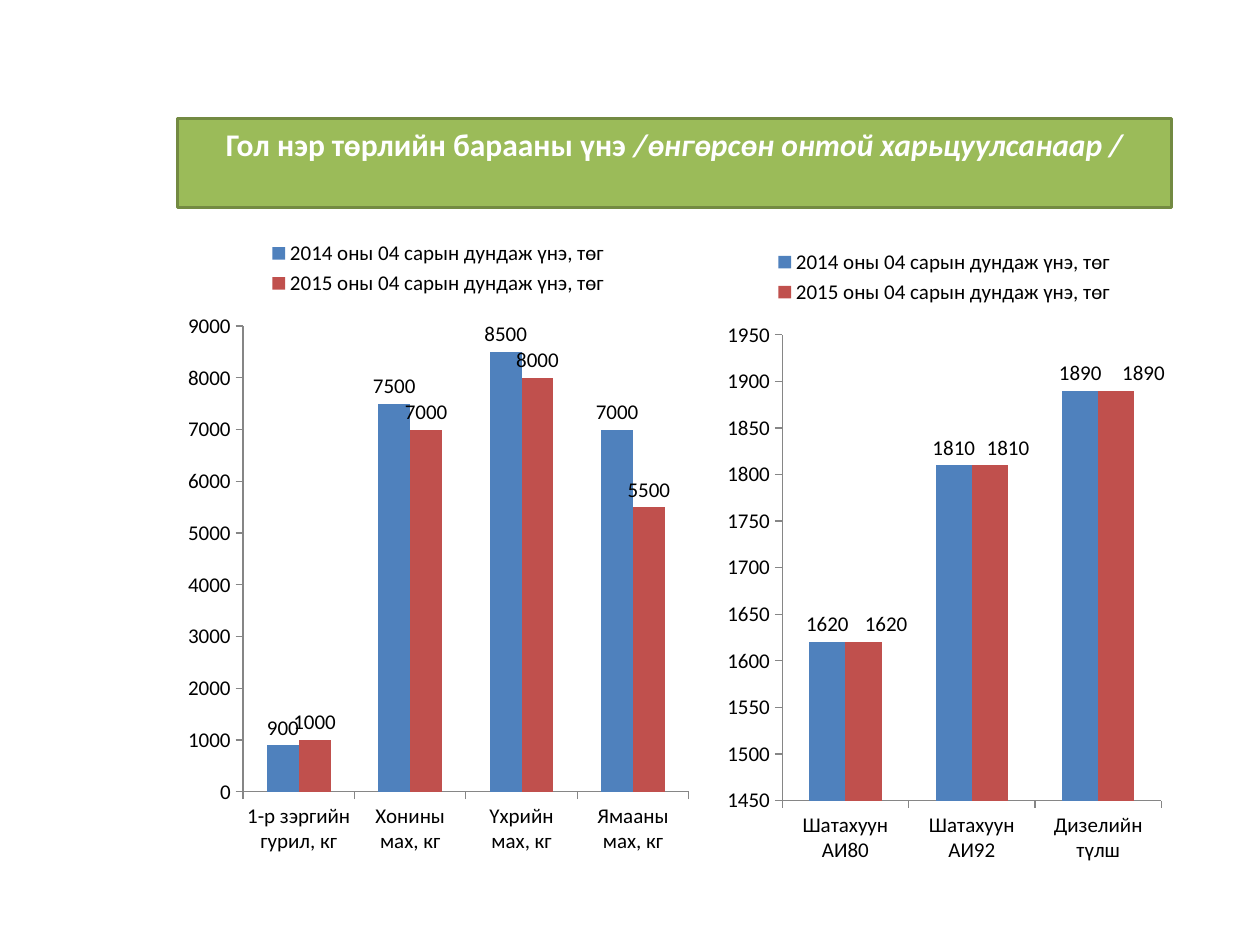
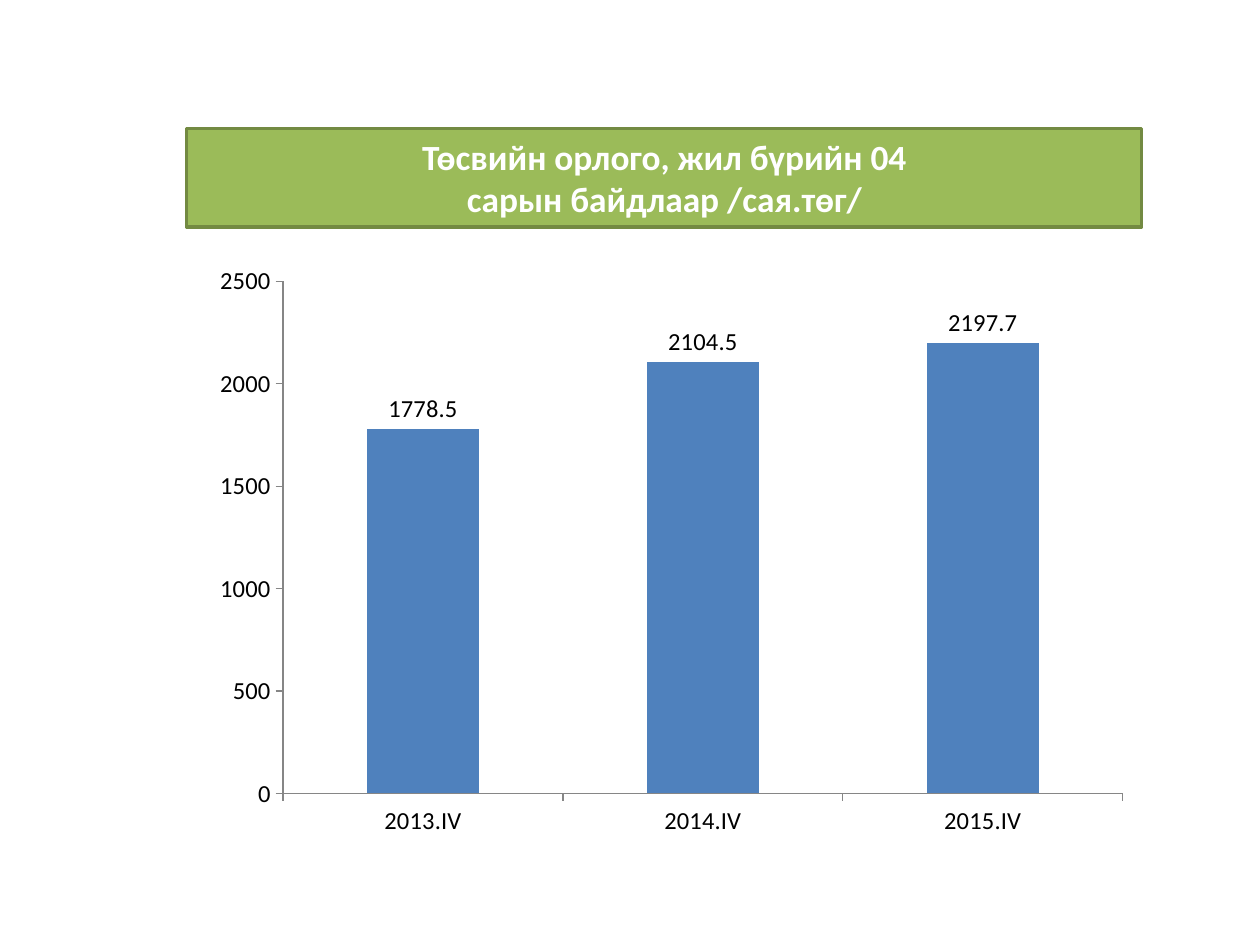
from lxml import etree
from pptx import Presentation
from pptx.chart.data import CategoryChartData
from pptx.dml.color import RGBColor
from pptx.enum.chart import (XL_CHART_TYPE as ChartType, XL_LABEL_POSITION as LabelPos,
                             XL_LEGEND_POSITION as LegendPos, XL_TICK_MARK as Tick)
from pptx.enum.shapes import MSO_SHAPE as Shape
from pptx.enum.text import MSO_ANCHOR as Anchor, PP_ALIGN as Align
from pptx.oxml.ns import qn
from pptx.util import Pt

# Content: boxes are (left, top, width, height) in points
FONT = "Calibri"
COLORS = {"band": "9BBB59", "band_line": "738A42", "white": "FFFFFF",
          "text": "000000", "axis": "868686"}
SERIES_COLORS = ["4F81BD", "C0504D"]
YEARS = ["2014 оны 04 сарын дундаж үнэ, төг", "2015 оны 04 сарын дундаж үнэ, төг"]

SLIDES = [
    {"band": (101.5, 67.7, 568, 51), "size": 18,
     "title": [[("Гол нэр төрлийн барааны үнэ ", False),
                ("/өнгөрсөн онтой харьцуулсанаар /", True)]],
     "charts": [
         {"box": (410.4, 134.6, 258.5, 365.8), "size": 12, "legend": True,
          "cats": ["Шатахуун АИ80", "Шатахуун АИ92", "Дизелийн түлш"],
          "series": [(YEARS[0], (1620, 1810, 1890)), (YEARS[1], (1620, 1810, 1890))],
          "scale": (1450, 1950, 50), "label_shifts": (0.05, 0.04, 0.06)},
         {"box": (101.5, 129.6, 298, 365.8), "size": 12, "legend": True,
          "cats": ["1-р зэргийн гурил, кг", "Хонины мах, кг", "Үхрийн мах, кг",
                   "Ямааны мах, кг"],
          "series": [(YEARS[0], (900, 7500, 8500, 7000)),
                     (YEARS[1], (1000, 7000, 8000, 5500))],
          "scale": (0, 9000, 1000)}]},
    {"band": (106.6, 73.4, 545.8, 56.2), "size": 20.2,
     "title": [[("Төсвийн орлого, жил бүрийн 04", False)],
               [("сарын байдлаар /сая.төг/", False)]],
     "charts": [
         {"box": (106.6, 146.2, 551.5, 365.8), "size": 14, "legend": False,
          "cats": ["2013.IV", "2014.IV", "2015.IV"],
          "series": [("Series 1", (1778.5, 2104.5, 2197.7))],
          "scale": (0, 2500, 500), "plot": (0.1, 0.04, 0.87, 0.8)}]},
]


def rgb(name):
    return RGBColor.from_string(COLORS.get(name, name))


def make_layout(**values):
    """Return a c:layout element holding a manual layout."""
    layout = etree.Element(qn("c:layout"))
    manual = etree.SubElement(layout, qn("c:manualLayout"))
    for tag, value in values.items():
        etree.SubElement(manual, qn("c:" + tag)).set("val", str(value))
    return layout


def add_band(s, box, lines, size):
    sp = s.shapes.add_shape(Shape.RECTANGLE, *map(Pt, box))
    sp.shadow.inherit = False
    sp.fill.solid()
    sp.fill.fore_color.rgb = rgb("band")
    sp.line.color.rgb = rgb("band_line")
    sp.line.width = Pt(2)
    etree.SubElement(sp.line._get_or_add_ln(), qn("a:round"))
    tf = sp.text_frame
    tf.word_wrap = True
    tf.vertical_anchor = Anchor.TOP
    for i, line in enumerate(lines):
        p = tf.add_paragraph() if i else tf.paragraphs[0]
        p.alignment = Align.CENTER
        for text, italic in line:
            r = p.add_run()
            r.text = text
            if italic:
                r.font.italic = True
        p.font.name, p.font.size, p.font.bold = FONT, Pt(size), True
        p.font.color.rgb = rgb("white")


def add_column_chart(s, spec):
    data = CategoryChartData()
    data.categories = spec["cats"]
    for name, values in spec["series"]:
        data.add_series(name, values)
    chart = s.shapes.add_chart(ChartType.COLUMN_CLUSTERED, *map(Pt, spec["box"]), data).chart
    chart.has_title = False
    chart.font.name, chart.font.size = FONT, Pt(spec["size"])
    chart.font.color.rgb = rgb("text")
    chart.has_legend = spec["legend"]
    if spec["legend"]:
        chart.legend.position = LegendPos.TOP
        chart.legend.include_in_layout = False

    # Axes
    for axis in (chart.category_axis, chart.value_axis):
        axis.has_major_gridlines = False
        axis.major_tick_mark = Tick.OUTSIDE
        axis.minor_tick_mark = Tick.NONE
        axis.format.line.color.rgb = rgb("axis")
        axis.format.line.width = Pt(0.75)
    axis = chart.value_axis
    axis.minimum_scale, axis.maximum_scale, axis.major_unit = spec["scale"]

    # Columns and value labels
    plot = chart.plots[0]
    plot.vary_by_categories = False
    plot.gap_width, plot.overlap = 150, 0
    for ser, color in zip(plot.series, SERIES_COLORS):
        ser.format.fill.solid()
        ser.format.fill.fore_color.rgb = rgb(color)
        ser.invert_if_negative = False
        ser.data_labels.show_value = True
        ser.data_labels.position = LabelPos.OUTSIDE_END

    # Labels of the last series moved to the right
    shifts = spec.get("label_shifts", ())
    for i, shift in enumerate(shifts):
        ser.points[i].data_label.position = LabelPos.OUTSIDE_END
    for label, shift in zip(ser._element.iter(qn("c:dLbl")), shifts):
        label.find(qn("c:idx")).addnext(make_layout(x=shift, y=0))

    # Fixed inner plot area
    if "plot" in spec:
        area = chart._chartSpace.find(".//" + qn("c:plotArea"))
        for old in area.findall(qn("c:layout")):
            area.remove(old)
        x, y, w, h = spec["plot"]
        area.insert(0, make_layout(layoutTarget="inner", xMode="edge", yMode="edge",
                                   x=x, y=y, w=w, h=h))


def main():
    prs = Presentation()
    prs.slide_width, prs.slide_height = Pt(720), Pt(540)
    for content in SLIDES:
        s = prs.slides.add_slide(prs.slide_layouts[6])
        add_band(s, content["band"], content["title"], content["size"])
        for chart_spec in content["charts"]:
            add_column_chart(s, chart_spec)
    prs.save("out.pptx")


if __name__ == "__main__":
    main()
